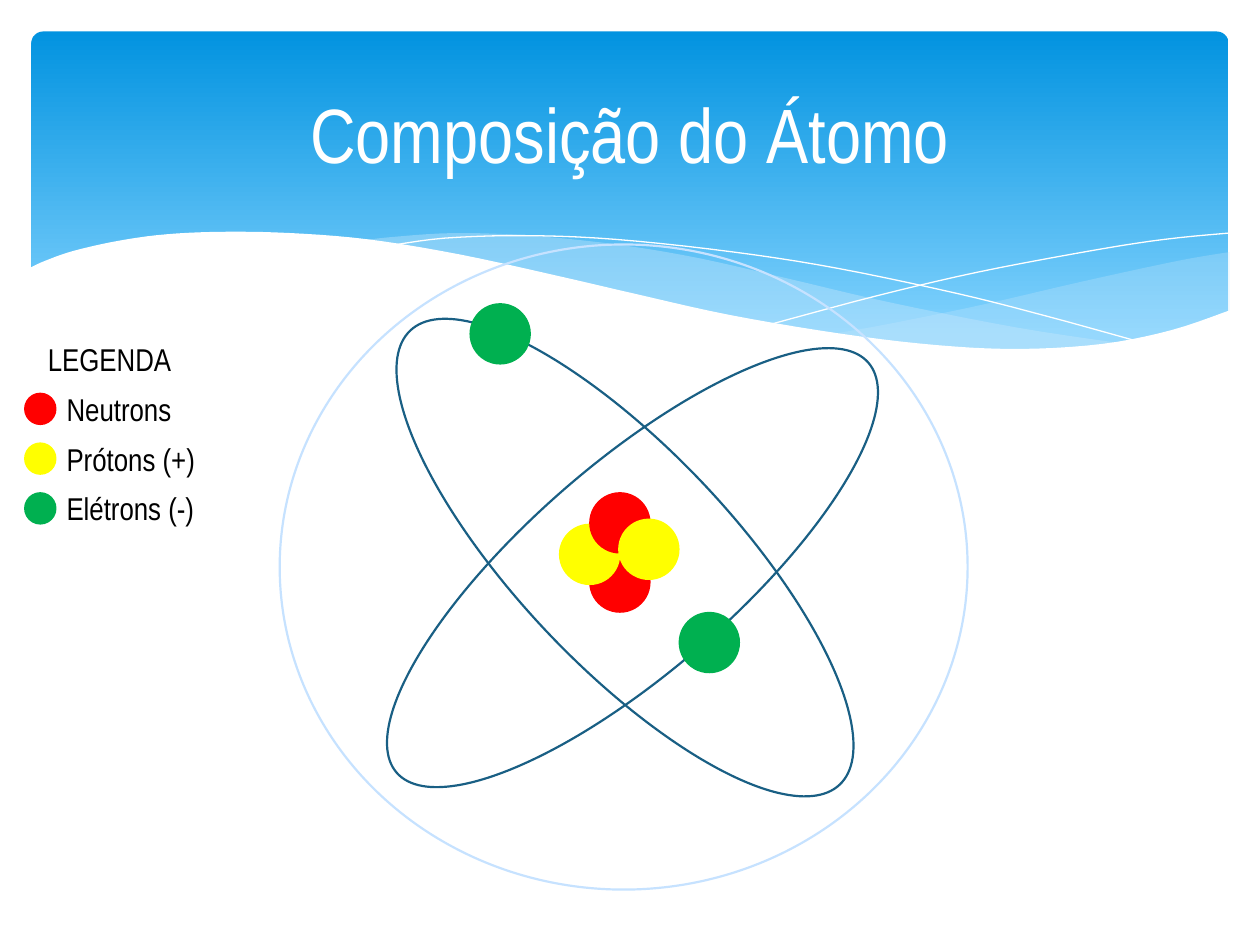
from lxml import etree
from pptx import Presentation
from pptx import util as u
from pptx.dml.color import RGBColor
from pptx.enum import shapes, text
from pptx.oxml.ns import qn

WHITE = RGBColor(0xFF, 0xFF, 0xFF)
BLACK = RGBColor(0, 0, 0)
SKY_TOP = RGBColor(0x02, 0x93, 0xE0)
SKY_BOTTOM = RGBColor(0x83, 0xD3, 0xFE)
MIST = RGBColor(0xC6, 0xE7, 0xFC)
ORBIT = RGBColor(0x19, 0x5F, 0x84)
HALO = RGBColor(0xC6, 0xE2, 0xFF)
RED = RGBColor(0xFF, 0, 0)
YELLOW = RGBColor(0xFF, 0xFF, 0)
GREEN = RGBColor(0, 0xB0, 0x50)
FONT = "Arial Narrow"
PRESET = shapes.MSO_SHAPE

# Wave outlines, in inches from the corner of the header box
MIST_RIGHT_TOP = [(9.76, 2), (9.35, 2.07), (8.61, 2.23), (7.79, 2.42), (7.06, 2.57), (6.61, 2.65)]
MIST_RIGHT_BASE = [(6.61, 2.65), (7.05, 2.71), (7.57, 2.76), (8.03, 2.78), (8.54, 2.76),
                   (8.97, 2.7), (9.35, 2.62), (9.76, 2.47)]
MIST_LEFT_TOP = [(8.93, 2.73), (8.07, 2.6), (7.06, 2.4), (6.29, 2.22), (5.55, 2.05),
                 (4.89, 1.94), (4.2, 1.87), (3.61, 1.85), (3.13, 1.88), (2.86, 1.91)]
MIST_LEFT_BASE = [(2.86, 1.91), (3.62, 2.03), (4.49, 2.22), (5.3, 2.4), (6.01, 2.55), (6.65, 2.66),
                  (7.22, 2.74), (7.73, 2.77), (8.18, 2.78), (8.57, 2.77), (8.93, 2.73)]
FALLING_LINE = [(3.09, 1.95), (3.53, 1.89), (4.16, 1.87), (4.89, 1.9), (5.82, 2), (6.65, 2.13),
                (7.6, 2.33), (8.31, 2.51), (9.07, 2.72)]
RISING_LINE = [(6.13, 2.57), (6.95, 2.35), (7.76, 2.16), (8.66, 1.99), (9.24, 1.9), (9.75, 1.85)]
WHITE_WAVE = [(9.77, 2.46), (9.3, 2.62), (8.75, 2.73), (8.09, 2.77), (7.44, 2.74), (6.68, 2.65),
              (5.79, 2.5), (5.03, 2.33), (4.47, 2.2), (3.65, 2.02), (2.92, 1.9), (2.3, 1.85),
              (1.77, 1.84), (1.32, 1.86), (0.95, 1.91), (0.59, 1.99), (0.36, 2.07), (0.23, 2.13)]


def smooth(points, steps=5):
    """Run a Catmull-Rom curve through the points."""
    padded = [points[0], *points, points[-1]]
    curve = []
    for a, b, c, d in zip(padded, padded[1:], padded[2:], padded[3:]):
        for step in range(steps):
            t = step / steps
            curve.append(tuple(
                q + t / 2 * (r - p + t * (2 * p - 5 * q + 4 * r - s + t * (3 * (q - r) + s - p)))
                for p, q, r, s in zip(a, b, c, d)))
    return curve + [points[-1]]


def style(shape, fill=None, line=None, width=1.25):
    shape.shadow.inherit = False
    if fill is None:
        shape.fill.background()
    else:
        shape.fill.solid()
        shape.fill.fore_color.rgb = fill
    if line is None:
        shape.line.fill.background()
    else:
        shape.line.color.rgb = line
        shape.line.width = u.Pt(width)


def add_preset(slide, preset, box, **look):
    shape = slide.shapes.add_shape(preset, *map(u.Inches, box))
    style(shape, **look)
    return shape


def add_wave(slide, box, points, closed=True, opacity=100, **look):
    corners = [(u.Inches(box[0] + x), u.Inches(box[1] + y)) for x, y in points]
    builder = slide.shapes.build_freeform(*corners[0], scale=1.0)
    builder.add_line_segments(corners[1:], close=closed)
    shape = builder.convert_to_shape()
    style(shape, **look)
    if opacity < 100:
        color = shape.fill._xPr.find(qn("a:solidFill"))[0]
        etree.SubElement(color, qn("a:alpha"), val=str(opacity * 1000))


def add_label(slide, box, words, size, color, align=text.PP_ALIGN.LEFT,
              anchor=text.MSO_ANCHOR.TOP):
    frame = slide.shapes.add_textbox(*map(u.Inches, box)).text_frame
    frame.word_wrap = True
    frame.vertical_anchor = anchor
    paragraph = frame.paragraphs[0]
    paragraph.alignment = align
    run = paragraph.add_run()
    run.text = words
    run.font.name = FONT
    run.font.size = u.Pt(size)
    run.font.color.rgb = color


def add_particle(slide, center, diameter, color):
    x, y = center
    box = (x - diameter / 2, y - diameter / 2, diameter, diameter)
    add_preset(slide, PRESET.FLOWCHART_CONNECTOR, box, fill=color, line=color)


def add_header(slide, box):
    left, top, width, height = box
    margin = 0.25
    # Gradient panel
    panel = add_preset(slide, PRESET.ROUNDED_RECTANGLE,
                       (left + margin, top + margin, width - 2 * margin, height - 2 * margin))
    panel.adjustments[0] = 0.034
    panel.fill.gradient()
    panel.fill.gradient_angle = 270
    for stop, color, position in zip(panel.fill.gradient_stops, (SKY_TOP, SKY_BOTTOM), (0, 0.9)):
        stop.color.rgb = color
        stop.position = position
    # Waves
    add_wave(slide, box, smooth(MIST_RIGHT_TOP) + smooth(MIST_RIGHT_BASE), opacity=29, fill=MIST)
    add_wave(slide, box, smooth(MIST_LEFT_TOP) + smooth(MIST_LEFT_BASE), opacity=40, fill=MIST)
    for points in (FALLING_LINE, RISING_LINE):
        add_wave(slide, box, smooth(points), closed=False, line=WHITE, width=0)
    add_wave(slide, box, smooth(WHITE_WAVE) + [(0.23, 3.29), (9.77, 3.29)], fill=WHITE)
    # Title
    add_label(slide, (left + 0.5, top + 0.37, width - 1, 1.37), "Composição do Átomo", 44, WHITE,
              text.PP_ALIGN.CENTER, text.MSO_ANCHOR.MIDDLE)


def add_atom(slide, box):
    left, top, width, height = box
    diameter = 0.47
    # Orbits: offset and size in inches, rotation in degrees
    orbits = [(0.32, 1.74, 4.96, 1.65, 319), (0.26, 1.63, 4.96, 1.71, 226.6)]
    for x, y, across, down, rotation in orbits:
        orbit = add_preset(slide, PRESET.OVAL, (left + x, top + y, across, down), line=ORBIT)
        orbit.rotation = rotation
    # Nucleus, then electrons
    particles = [(2.7, 2.68, RED), (2.46, 2.46, YELLOW), (2.7, 2.21, RED), (2.93, 2.42, YELLOW),
                 (1.75, 0.71, GREEN), (3.41, 3.16, GREEN)]
    for x, y, color in particles:
        add_particle(slide, (left + x, top + y), diameter, color)
    # Outer halo
    add_preset(slide, PRESET.OVAL, box, line=HALO)


def add_legend(slide, box):
    left, top, width, height = box
    row = height / 4
    add_label(slide, (left, top, width, row), "LEGENDA", 18, BLACK, text.PP_ALIGN.CENTER)
    entries = [("Neutrons", RED), ("Prótons (+)", YELLOW), ("Elétrons (-)", GREEN)]
    for index, (name, color) in enumerate(entries, start=1):
        y = top + index * row
        add_particle(slide, (left + 0.2, y + 0.2), 0.24, color)
        add_label(slide, (left + 0.31, y, 1.34, row), name, 18, BLACK)


def main():
    presentation = Presentation()
    presentation.slide_width = u.Inches(10)
    presentation.slide_height = u.Inches(7.5)
    slide = presentation.slides.add_slide(presentation.slide_layouts[6])
    add_header(slide, (0, 0, 10, 3.2))
    add_atom(slide, (2.22, 1.94, 5.46, 5.12))
    add_legend(slide, (0.12, 2.65, 1.5, 1.58))
    presentation.save("out.pptx")


if __name__ == "__main__":
    main()
